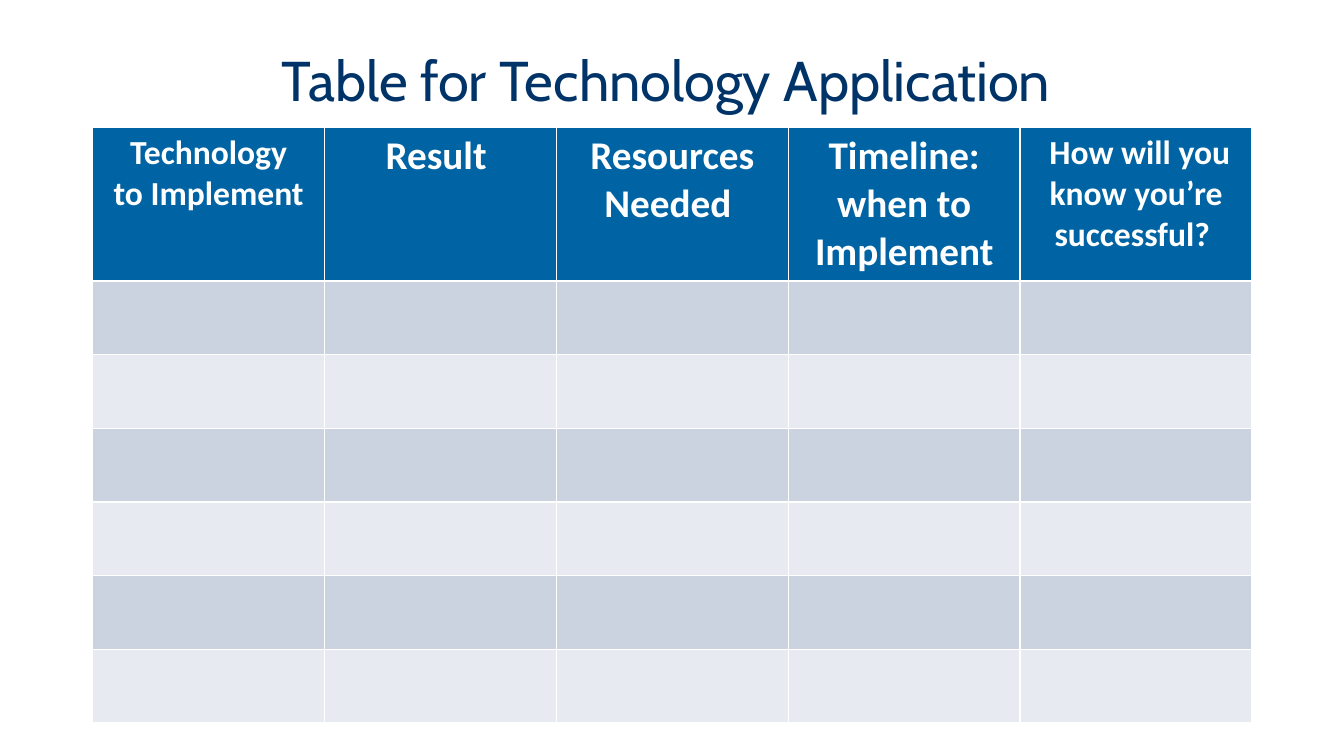
import pptx
import pptx.dml.color
import pptx.enum.text
import pptx.util

Pt = pptx.util.Pt
CENTER = pptx.enum.text.PP_ALIGN.CENTER

COLORS = {
    "title": "003468",
    "head": "0064A4",
    "text": "FFFFFF",
    "dark": "CCD3E0",
    "light": "E7EAF0",
}
LEFT, WIDTH = 66.24, 828
HEADS = [
    ("Technology\nto Implement", 24),
    ("Result ", 28),
    ("Resources\nNeeded ", 28),
    ("Timeline: when to Implement", 28),
    (" How will you know you’re successful? ", 24),
]
BLANKS = 6
HEAD_HIGH, ROW_HIGH = 109, 52.6


def color(name):
    return pptx.dml.color.RGBColor.from_string(COLORS[name])


def style(para, font, size, tint, bold=False):
    para.alignment = CENTER
    para.font.name = font
    para.font.size = Pt(size)
    para.font.bold = bold
    para.font.color.rgb = color(tint)


def set_title(slide, text):
    title = slide.shapes.title
    title.left, title.top = Pt(LEFT), Pt(28.8)
    title.width, title.height = Pt(WIDTH), Pt(61.9)
    frame = title.text_frame
    frame.text = text
    frame.auto_size = pptx.enum.text.MSO_AUTO_SIZE.NONE
    frame.vertical_anchor = pptx.enum.text.MSO_ANCHOR.MIDDLE
    para = frame.paragraphs[0]
    para.line_spacing = 0.9
    style(para, "Cabin", 40, "title")


def fill_row(row, high, tint):
    row.height = Pt(high)
    for cell in row.cells:
        cell.fill.solid()
        cell.fill.fore_color.rgb = color(tint)


def add_plan(slide):
    """Add the table: a header row above banded empty rows."""
    high = HEAD_HIGH + BLANKS * ROW_HIGH
    frame = slide.shapes.add_table(
        BLANKS + 1, len(HEADS), Pt(LEFT), Pt(90.9), Pt(WIDTH), Pt(high))
    head, *blanks = frame.table.rows
    fill_row(head, HEAD_HIGH, "head")
    for cell, (text, size) in zip(head.cells, HEADS):
        cell.text = text
        for para in cell.text_frame.paragraphs:
            style(para, "Calibri", size, "text", bold=True)
    for i, row in enumerate(blanks):
        fill_row(row, ROW_HIGH, "light" if i % 2 else "dark")


def main():
    deck = pptx.Presentation()
    deck.slide_width, deck.slide_height = Pt(960), Pt(540)
    slide = deck.slides.add_slide(deck.slide_layouts.get_by_name("Title Only"))
    set_title(slide, "Table for Technology Application ")
    add_plan(slide)
    deck.save("out.pptx")


if __name__ == "__main__":
    main()
